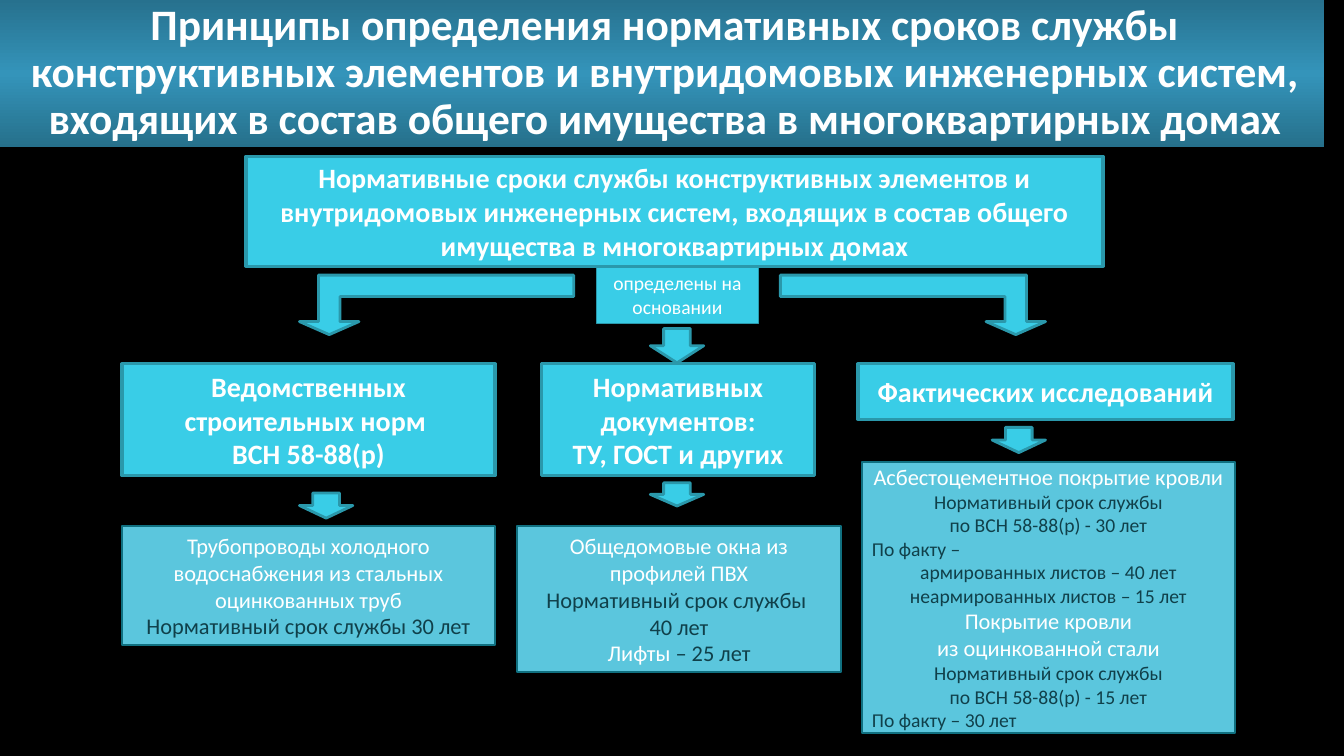
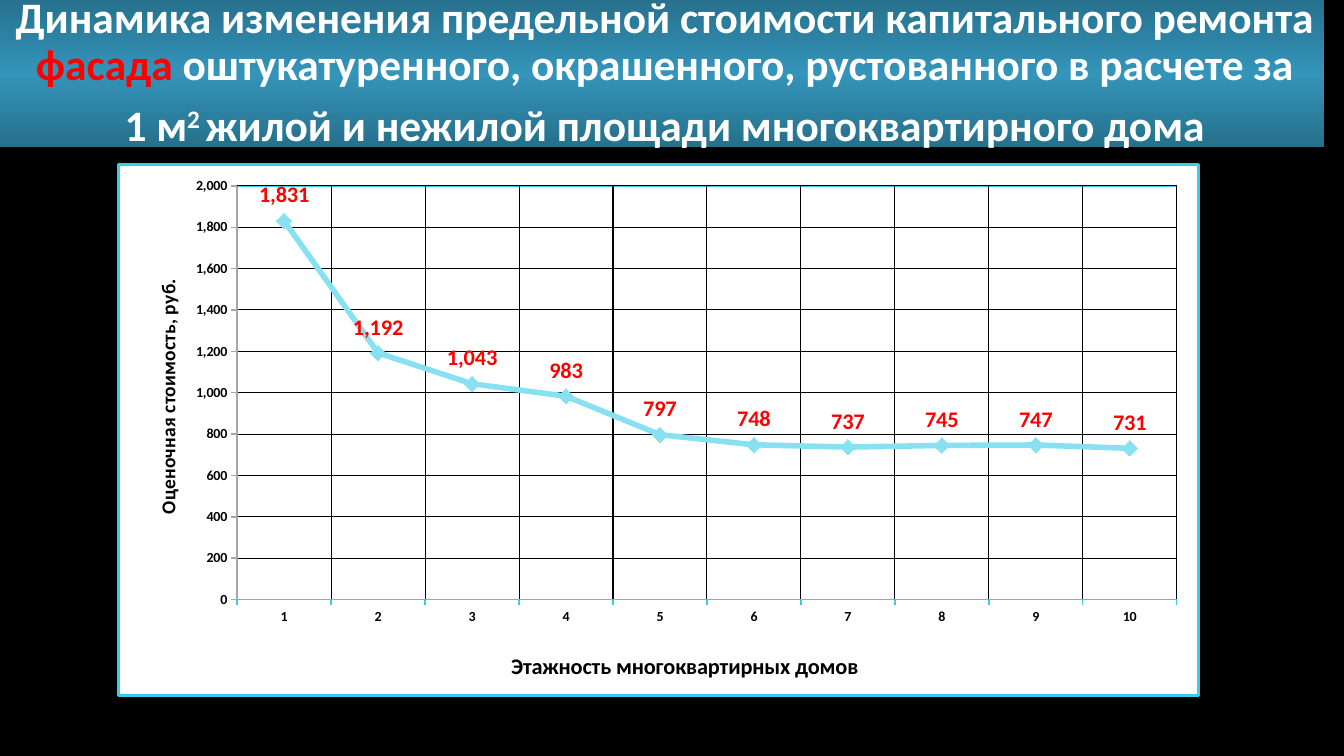
from dataclasses import dataclass
from typing import Any, NamedTuple

from lxml import etree
from pptx import Presentation
from pptx.chart.data import CategoryChartData as ChartData
from pptx.dml.color import RGBColor as RGB
from pptx.enum.chart import XL_CHART_TYPE as Kind
from pptx.enum.chart import XL_LABEL_POSITION as Place
from pptx.enum.chart import XL_MARKER_STYLE as Mark
from pptx.enum.chart import XL_TICK_MARK as Tick
from pptx.enum.shapes import MSO_SHAPE as Form
from pptx.enum.text import MSO_ANCHOR as Anchor
from pptx.enum.text import PP_ALIGN as Align
from pptx.oxml import parse_xml
from pptx.oxml.ns import nsdecls, qn
from pptx.util import Inches, Pt

HUES = {
    "back": "000000",
    "white": "FFFFFF",
    "dark": "10404A",
    "red": "FF0000",
    "box": "39CDE7",
    "edge": "2A98AB",
    "note": "5BC6DD",
    "rim": "107080",
    "line": "88E1F1",
    "axis": "A6A6A6",
    "band": "27718E",
    "glow": "3494BA",
    "base": "26708B",
}
FONT = "Calibri"


class Run(NamedTuple):
    text: str
    hue: str = "white"
    size: float = 16
    bold: bool = False
    sup: bool = False


class Para(NamedTuple):
    runs: list[Run]
    align: Any = Align.CENTER


class Style(NamedTuple):
    fill: str
    edge: str
    width: float


HEAD = Style("box", "edge", 2.25)
LINK = Style("box", "edge", 0.75)
ARROW = Style("box", "edge", 2)
NOTE = Style("note", "rim", 1.25)


@dataclass
class Box:
    left: float
    top: float
    wide: float
    high: float
    style: Style
    paras: list[Para]
    anchor: Any = Anchor.MIDDLE


@dataclass
class Bend:
    left: float
    wide: float
    flips: tuple[str, ...]


def rgb(hue: str) -> RGB:
    return RGB.from_string(HUES[hue])


def put(item: Any, form: dict[str, Any]) -> None:
    for name, value in form.items():
        setattr(item, name, value)


def ink(font: Any, size: float, hue: str, bold: bool) -> None:
    put(font, {"name": FONT, "size": Pt(size), "bold": bold})
    font.color.rgb = rgb(hue)


def stroke(line: Any, hue: str, width: float) -> None:
    line.color.rgb = rgb(hue)
    line.width = Pt(width)


def write(shape: Any, paras: list[Para], anchor: Any) -> list[Any]:
    frame = shape.text_frame
    put(frame, {"word_wrap": True, "vertical_anchor": anchor})
    made = []
    for spot, para in enumerate(paras):
        line = frame.add_paragraph() if spot else frame.paragraphs[0]
        line.alignment = para.align
        for run in para.runs:
            for part, text in enumerate(run.text.split("\n")):
                if part:
                    line.add_line_break()
                piece = line.add_run()
                piece.text = text
                ink(piece.font, run.size, run.hue, run.bold)
                if run.sup:
                    piece.font._element.set("baseline", "30000")
        made.append(line)
    return made


def draw(slide: Any, form: Any, at: tuple[float, ...], style: Style) -> Any:
    shape = slide.shapes.add_shape(form, *map(Inches, at))
    shape.shadow.inherit = False
    shape.fill.solid()
    shape.fill.fore_color.rgb = rgb(style.fill)
    stroke(shape.line, style.edge, style.width)
    return shape


def start(deck: Any, paras: list[Para]) -> Any:
    slide = deck.slides.add_slide(deck.slide_layouts[6])
    slide.background.fill.solid()
    slide.background.fill.fore_color.rgb = rgb("back")
    band = draw(slide, Form.RECTANGLE, (0, 0, 13.13, 1.46), LINK)
    band.line.fill.background()
    band.fill.gradient()
    grad = band._element.spPr.find(qn("a:gradFill"))
    stops = "".join(
        f'<a:gs pos="{spot}"><a:srgbClr val="{HUES[hue]}"/></a:gs>'
        for spot, hue in ((0, "band"), (50000, "glow"), (100000, "base"))
    )
    grad.getparent().replace(grad, parse_xml(
        f'<a:gradFill {nsdecls("a")} rotWithShape="1"><a:gsLst>{stops}</a:gsLst>'
        '<a:lin ang="5400000" scaled="0"/></a:gradFill>'
    ))
    for spot, line in enumerate(write(band, paras, Anchor.MIDDLE)):
        line.line_spacing = 0.9
        line._p.get_or_add_pPr().set("marL", str(Inches(0.05)))
        if spot:
            line.space_before = Pt(10)
    return slide


def title(text: str, hue: str = "white", sup: bool = False) -> Run:
    return Run(text, hue, 31, True, sup)


def head(*lines: str) -> list[Para]:
    return [Para([Run(text, "white", 20, True)]) for text in lines]


def lead(text: str) -> Para:
    return Para([Run(text)])


def fact(text: str, size: float = 14, align: Any = Align.CENTER) -> Para:
    return Para([Run(text, "dark", size)], align)


BOXES = [
    Box(5.92, 2.64, 1.6, 0.57, LINK,
        [Para([Run("определены на основании", size=14)])], Anchor.TOP),
    Box(1.21, 3.61, 3.7, 1.11, HEAD,
        head("Ведомственных строительных норм \nВСН 58-88(р)")),
    Box(5.37, 3.61, 2.71, 1.11, HEAD,
        head("Нормативных документов:", "ТУ, ГОСТ и других")),
    Box(8.51, 3.61, 3.72, 0.55, HEAD, head("Фактических исследований")),
    Box(2.44, 1.55, 8.5, 1.09, HEAD, head(
        "Нормативные сроки службы конструктивных элементов и внутридомовых "
        "инженерных систем, входящих в состав общего имущества в "
        "многоквартирных домах")),
    Box(1.21, 5.22, 3.7, 1.18, NOTE, [
        lead("Трубопроводы холодного водоснабжения из стальных оцинкованных труб"),
        fact("Нормативный срок службы 30 лет", 16)]),
    Box(5.13, 5.22, 3.21, 1.45, NOTE, [
        lead("Общедомовые окна из профилей ПВХ"),
        fact("Нормативный срок службы \n40 лет", 16),
        Para([Run("Лифты "), Run("– 25 лет", "dark")])]),
    Box(8.55, 4.58, 3.7, 2.69, NOTE, [
        lead("Асбестоцементное покрытие кровли"),
        fact("Нормативный срок службы"),
        fact("по ВСН 58-88(р) - 30 лет"),
        fact("По факту –", align=Align.LEFT),
        fact("армированных листов – 40 лет"),
        fact("неармированных листов – 15 лет"),
        lead("Покрытие кровли"),
        lead("из оцинкованной стали"),
        fact("Нормативный срок службы"),
        fact("по ВСН 58-88(р) - 15 лет"),
        fact("По факту – 30 лет", align=Align.LEFT)]),
]
DOWNS = [(6.45, 3.26, 0.34), (2.97, 4.89, 0.25), (6.45, 4.79, 0.23), (9.84, 4.24, 0.25)]
BENDS = [Bend(2.97, 2.72, ("flipH", "flipV")), Bend(7.74, 2.63, ("flipV",))]
COSTS = [1831, 1192, 1043, 983, 797, 748, 737, 745, 747, 731]


def terms(deck: Any) -> None:
    slide = start(deck, [Para([title(
        "Принципы определения нормативных сроков службы конструктивных "
        "элементов и внутридомовых инженерных систем, входящих в состав "
        "общего имущества в многоквартирных домах")])])
    for box in BOXES:
        shape = draw(slide, Form.RECTANGLE,
                     (box.left, box.top, box.wide, box.high), box.style)
        write(shape, box.paras, box.anchor)
    for left, top, high in DOWNS:
        draw(slide, Form.DOWN_ARROW, (left, top, 0.53, high), ARROW)
    for bend in BENDS:
        shape = draw(slide, Form.BENT_UP_ARROW, (bend.left, 2.73, bend.wide, 0.59), ARROW)
        for spot, value in enumerate((0.36, 0.5, 0.22)):
            shape.adjustments[spot] = value
        for flip in bend.flips:
            shape._element.spPr.xfrm.set(flip, "1")


def layout(**spots: float) -> Any:
    root = etree.Element(qn("c:layout"))
    hand = etree.SubElement(root, qn("c:manualLayout"))
    if "w" in spots:
        etree.SubElement(hand, qn("c:layoutTarget")).set("val", "inner")
    for side in "xy":
        etree.SubElement(hand, qn(f"c:{side}Mode")).set("val", "edge")
    for name, value in spots.items():
        etree.SubElement(hand, qn(f"c:{name}")).set("val", str(value))
    return root


def panel(hue: str, width: float) -> Any:
    return parse_xml(
        f'<c:spPr {nsdecls("c", "a")}><a:solidFill><a:srgbClr val="{HUES["white"]}"/>'
        f'</a:solidFill><a:ln w="{Pt(width)}"><a:solidFill>'
        f'<a:srgbClr val="{HUES[hue]}"/></a:solidFill></a:ln></c:spPr>'
    )


def label(axis: Any, text: str, size: float, hue: str, x: float, y: float) -> None:
    axis.has_title = True
    run = axis.axis_title.text_frame.paragraphs[0].add_run()
    run.text = text
    ink(run.font, size, "back", True)
    root = axis.axis_title._element
    for old in root.findall(qn("c:layout")):
        root.remove(old)
    root.find(qn("c:tx")).addnext(layout(x=x, y=y))
    put(axis, {"has_major_gridlines": True, "major_tick_mark": Tick.OUTSIDE})
    stroke(axis.major_gridlines.format.line, "back", 0.75)
    stroke(axis.format.line, hue, 1)
    ink(axis.tick_labels.font, 10, "back", True)


def costs(deck: Any) -> None:
    slide = start(deck, [
        Para([title("Динамика изменения предельной стоимости капитального ремонта "),
              title("фасада", "red"),
              title(" оштукатуренного, окрашенного, рустованного в расчете за")]),
        Para([title("1 м"), title("2 ", sup=True),
              title("жилой и нежилой площади многоквартирного дома")]),
    ])
    data = ChartData(number_format="#,##0")
    data.categories = [str(floor) for floor in range(1, len(COSTS) + 1)]
    data.add_series("Series 1", COSTS)
    area = map(Inches, (1.16, 1.62, 10.74, 5.29))
    chart = slide.shapes.add_chart(Kind.LINE_MARKERS, *area, data).chart
    put(chart, {"has_legend": False, "has_title": False})
    ink(chart.font, 10, "back", False)
    label(chart.category_axis, "Этажность многоквартирных домов", 16, "box", 0.36, 0.91)
    label(chart.value_axis, "Оценочная стоимость, руб.", 14, "axis", 0.03, 0.21)
    put(chart.value_axis, {"minimum_scale": 0, "maximum_scale": 2000, "major_unit": 200})
    put(chart.value_axis.tick_labels,
        {"number_format": "#,##0", "number_format_is_linked": False})
    plot = chart.plots[0]
    put(plot, {"vary_by_categories": False, "has_data_labels": True})
    put(plot.data_labels, {"show_value": True, "position": Place.ABOVE,
                           "number_format": "#,##0", "number_format_is_linked": False})
    ink(plot.data_labels.font, 16, "red", True)
    row = plot.series[0]
    row.smooth = False
    stroke(row.format.line, "line", 4)
    put(row.marker, {"style": Mark.DIAMOND, "size": 11})
    row.marker.format.fill.solid()
    row.marker.format.fill.fore_color.rgb = rgb("line")
    row.marker.format.line.fill.background()
    root = chart._chartSpace.find(qn("c:chart"))
    root.addnext(panel("box", 2))
    field = root.find(qn("c:plotArea"))
    for old in field.findall(qn("c:layout")):
        field.remove(old)
    field.insert(0, layout(x=0.11, y=0.04, w=0.87, h=0.78))
    field.append(panel("box", 1))


def main() -> None:
    deck = Presentation()
    put(deck, {"slide_width": Inches(13.33), "slide_height": Inches(7.5)})
    terms(deck)
    costs(deck)
    deck.save("out.pptx")


if __name__ == "__main__":
    main()
